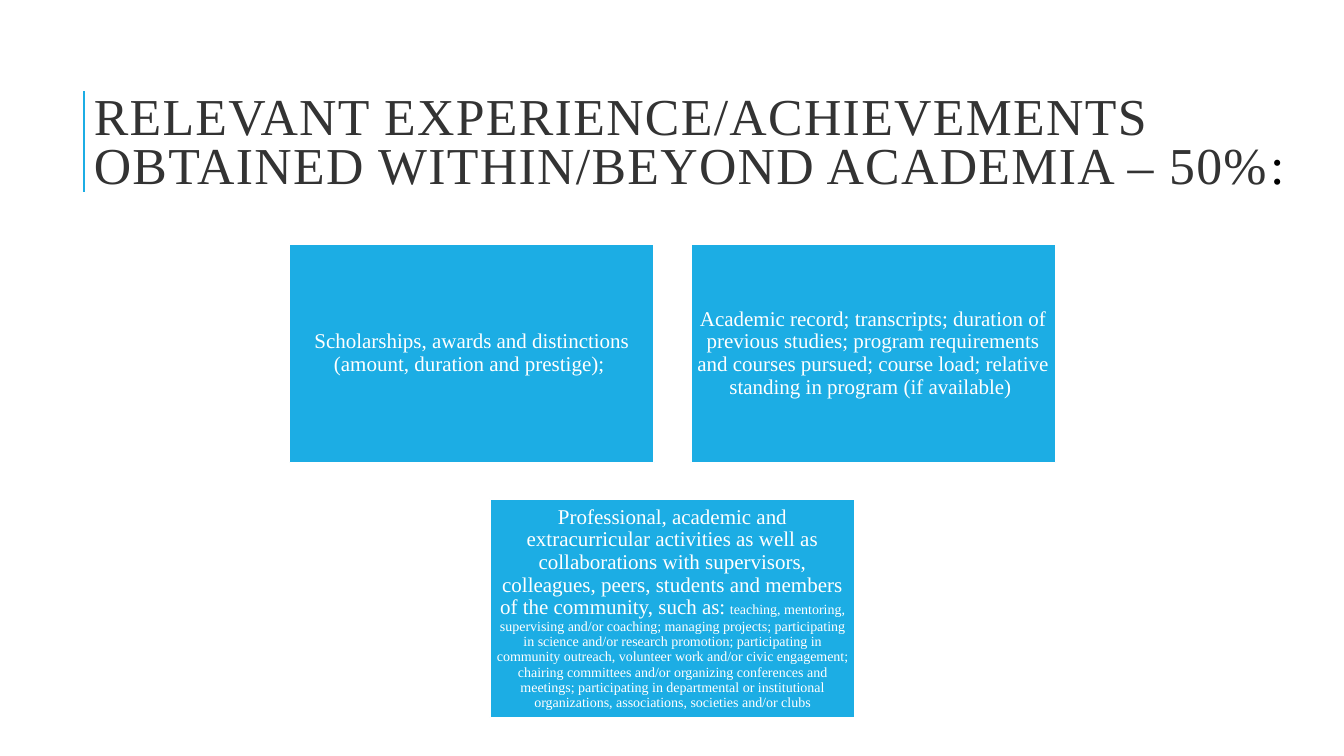
from dataclasses import dataclass

from lxml import etree
from pptx import Presentation
from pptx import util as u
from pptx.dml.color import RGBColor
from pptx.enum import shapes, text
from pptx.oxml.ns import qn


@dataclass(frozen=True)
class Theme:
    font: str = "Times New Roman"
    blue: str = "1CADE4"
    white: str = "FFFFFF"
    dark: str = "333333"
    black: str = "000000"
    head: float = 37
    body: float = 15
    gap: float = 12
    small: float = 10


T = Theme()
WIDE, HIGH = 13.33, 7.5

# Card grid: one column or row step is a card plus the gap
CARD_W, CARD_H = 3.62, 2.17
LEFT, TOP, GAP = 2.87, 2.42, 0.36
STEP_X, STEP_Y = CARD_W + GAP, CARD_H + GAP

# Each card: column, row, runs of (words, size)
CARDS = [
    (0, 0, [("Scholarships, awards and distinctions (amount, duration and "
             "prestige); ", T.body)]),
    (1, 0, [("Academic record; transcripts; duration of previous studies; "
             "program requirements and courses pursued; course load; relative "
             "standing in program (if available) ", T.body)]),
    (0.5, 1, [
        ("Professional, academic and extracurricular activities as well as "
         "collaborations with supervisors, colleagues, peers, students and "
         "members of the community, such as:", T.body),
        (" ", T.gap),
        ("teaching, mentoring, supervising and/or coaching; managing projects; "
         "participating in science and/or research promotion; participating in "
         "community outreach, volunteer work and/or civic engagement; chairing "
         "committees and/or organizing conferences and meetings; participating "
         "in departmental or institutional organizations, associations, "
         "societies and/or clubs", T.small)]),
]


def paint(hue):
    return RGBColor.from_string(hue)


def setup(frame, pad_x, pad_y, align, space):
    """Prepare a text frame and return its first paragraph."""
    frame.word_wrap = True
    frame.auto_size = text.MSO_AUTO_SIZE.NONE
    frame.vertical_anchor = text.MSO_ANCHOR.MIDDLE
    frame.margin_left = frame.margin_right = u.Inches(pad_x)
    frame.margin_top = frame.margin_bottom = u.Inches(pad_y)
    para = frame.paragraphs[0]
    para.alignment, para.line_spacing = align, space
    return para


def write(para, words, size=T.body, hue=T.white, track=0):
    """Add one formatted run; track is letter spacing in points."""
    run = para.add_run()
    run.text = words
    run.font.name, run.font.size = T.font, u.Pt(size)
    run.font.color.rgb = paint(hue)
    if track:
        run.font._element.set("spc", str(track * 100))


def title(slide):
    head = slide.shapes.title
    head.left, head.top = u.Inches(0.83), u.Inches(0.72)
    head.width, head.height = u.Inches(12.32), u.Inches(1.44)
    para = setup(head.text_frame, 0.1, 0.05, text.PP_ALIGN.LEFT, 0.8)
    write(para, "RELEVANT EXPERIENCE/ACHIEVEMENTS OBTAINED WITHIN/BEYOND "
          "ACADEMIA – 50%", size=T.head, hue=T.dark, track=1)
    write(para, ":", size=T.head, hue=T.black, track=1)


def rule(slide, x, top, end):
    line = slide.shapes.add_connector(
        shapes.MSO_CONNECTOR.STRAIGHT,
        u.Inches(x), u.Inches(end), u.Inches(x), u.Inches(top))
    line.line.color.rgb = paint(T.blue)
    line.line.width = u.Pt(1.5)
    etree.SubElement(line._element.spPr, qn("a:effectLst"))


def card(slide, col, row, runs):
    box = slide.shapes.add_shape(
        shapes.MSO_SHAPE.RECTANGLE,
        u.Inches(LEFT + col * STEP_X), u.Inches(TOP + row * STEP_Y),
        u.Inches(CARD_W), u.Inches(CARD_H))
    box.shadow.inherit = False
    box.fill.solid()
    box.fill.fore_color.rgb = paint(T.blue)
    box.line.color.rgb = paint(T.white)
    box.line.width = u.Pt(1.25)
    para = setup(box.text_frame, 0.06, 0.06, text.PP_ALIGN.CENTER, 0.9)
    for words, size in runs:
        write(para, words, size=size)


def main():
    deck = Presentation()
    deck.slide_width, deck.slide_height = u.Inches(WIDE), u.Inches(HIGH)
    slide = deck.slides.add_slide(deck.slide_layouts.get_by_name("Title Only"))

    # Heading with its accent line
    rule(slide, 0.83, 0.9, 1.9)
    title(slide)

    # Two cards above, one centred below
    for col, row, runs in CARDS:
        card(slide, col, row, runs)

    deck.save("out.pptx")


if __name__ == "__main__":
    main()
